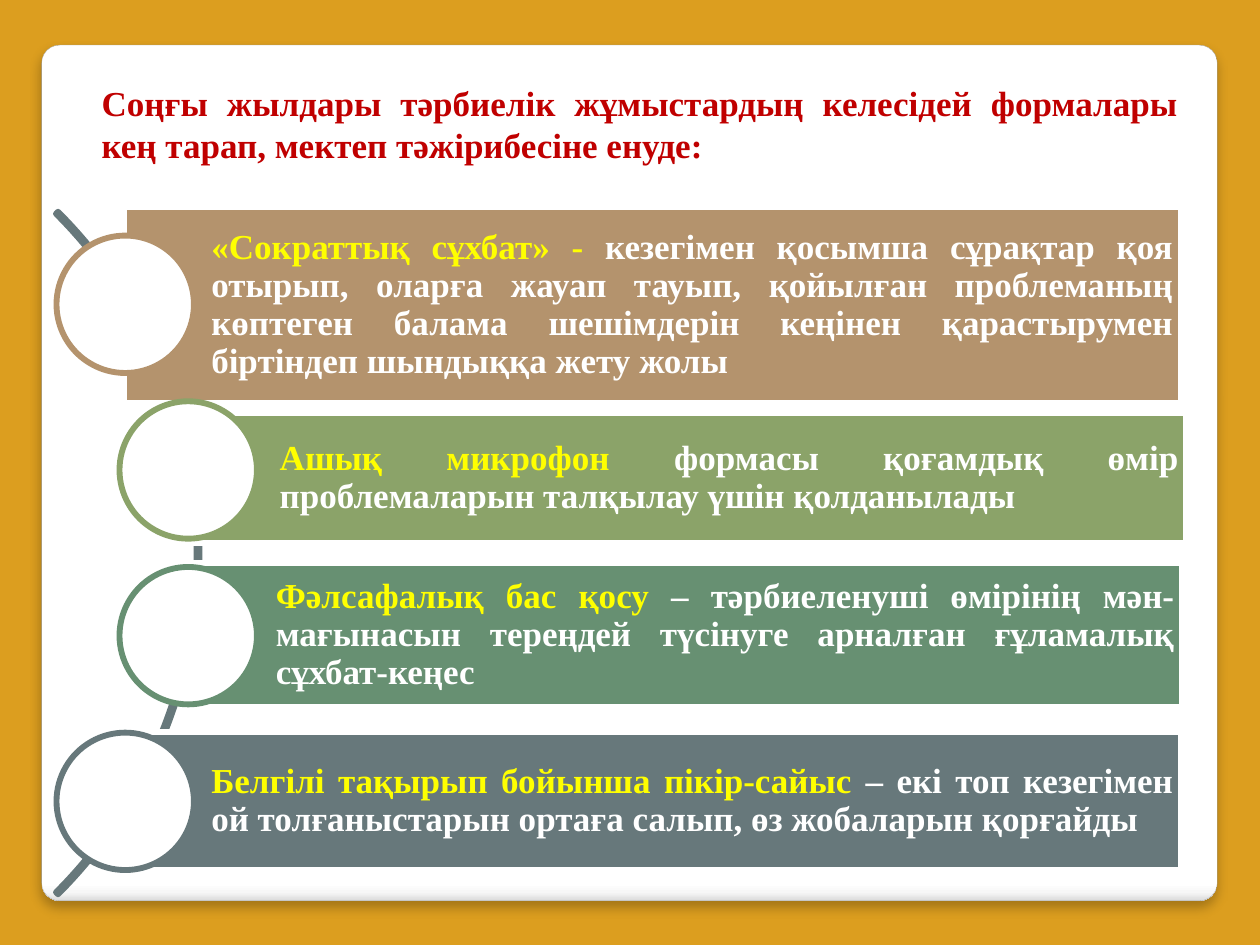
from dataclasses import dataclass

from lxml.etree import SubElement
from pptx import Presentation
from pptx.dml.color import RGBColor as Rgb
from pptx.enum.shapes import MSO_SHAPE as Kind
from pptx.enum.text import MSO_ANCHOR as Anchor, PP_ALIGN as Align
from pptx.oxml.ns import qn
from pptx.util import Cm, Pt


@dataclass(frozen=True)
class Theme:
    background: str = "DC9E1F"
    card_edge: str = "A4A4A4"
    white: str = "FFFFFF"
    title: str = "C00000"
    term: str = "FFFF00"
    arc: str = "67787B"
    font: str = "Times New Roman"
    text_size: float = 20
    outline: float = 3.35
    card_stops: tuple = ((0, "FFFFFF"), (98, "FFFFFF"), (99, "F7F7F7"), (100, "DADADA"))


@dataclass(frozen=True)
class Method:
    term: str
    meaning: str
    color: str
    bar: tuple[float, float, float, float]
    circle_left: float


THEME = Theme()
TITLE = ("Соңғы жылдары тəрбиелік жұмыстардың келесідей формалары кең тарап, "
         "мектеп тəжірибесіне енуде:")
CIRCLE_TOP, CIRCLE_STEP, CIRCLE_SIZE = 4.75, 3.34, 2.77
METHODS = (
    Method("«Сократтық сұхбат» - ",
           "кезегімен қосымша сұрақтар қоя отырып, оларға жауап тауып, қойылған проблеманың "
           "көптеген балама шешімдерін кеңінен қарастырумен біртіндеп шындыққа жету жолы",
           "B4936D", (2.51, 4.17, 21.29, 3.96), 1.14),
    Method("Ашық микрофон ",
           "формасы қоғамдық өмір проблемаларын талқылау үшін қолданылады",
           "8BA369", (3.89, 8.33, 20.02, 2.62), 2.41),
    Method("Фəлсафалық бас қосу ",
           "– тəрбиеленуші өмірінің мəн-мағынасын тереңдей түсінуге арналған ғұламалық сұхбат-кеңес",
           "679072", (3.81, 11.35, 20.02, 2.9), 2.41),
    Method("Белгілі тақырып бойынша пікір-сайыс ",
           "– екі топ кезегімен ой толғаныстарын ортаға салып, өз жобаларын қорғайды",
           "67787B", (2.51, 14.76, 21.29, 2.77), 1.14),
)


def add_outlined(slide, kind: Kind, box: tuple, fill: str | None, line: str,
                 width: float = THEME.outline):
    """Add a preset shape with a flat fill, or none, and an outline."""
    shape = slide.shapes.add_shape(kind, *map(Cm, box))
    shape.shadow.inherit = False
    if fill:
        shape.fill.solid()
        shape.fill.fore_color.rgb = Rgb.from_string(fill)
    else:
        shape.fill.background()
    shape.line.color.rgb = Rgb.from_string(line)
    shape.line.width = Pt(width)
    return shape


def style_run(run, color: str) -> None:
    """Give a run the slide's bold type in one colour."""
    run.font.name = THEME.font
    run.font.size = Pt(THEME.text_size)
    run.font.bold = True
    run.font.color.rgb = Rgb.from_string(color)


def add_card(slide) -> None:
    """Draw the rounded card with its shaded lower edge and soft shadow."""
    card = add_outlined(slide, Kind.ROUNDED_RECTANGLE, (0.84, 0.91, 23.7, 17.25),
                        None, THEME.card_edge, 0.16)
    card.adjustments[0] = 0.021
    card.fill.gradient()
    card.fill.gradient_angle = 270
    properties = card._element.spPr
    stops = properties.find(".//" + qn("a:gsLst"))
    stops.clear()
    for percent, color in THEME.card_stops:
        stop = SubElement(stops, qn("a:gs"), pos=str(percent * 1000))
        SubElement(stop, qn("a:srgbClr"), val=color)
    shadow = SubElement(properties.find(qn("a:effectLst")), qn("a:outerShdw"),
                        blurRad=str(Pt(6)), dist=str(Pt(4)), dir="5400000", rotWithShape="0")
    shade = SubElement(shadow, qn("a:srgbClr"), val="000000")
    SubElement(shade, qn("a:alpha"), val="25000")


def add_title(slide) -> None:
    """Write the justified heading."""
    frame = slide.shapes.add_textbox(Cm(1.8), Cm(1.52), Cm(22.2), Cm(1.96)).text_frame
    frame.word_wrap = True
    frame.text = TITLE
    heading = frame.paragraphs[0]
    heading.alignment = Align.JUSTIFY
    style_run(heading.runs[0], THEME.title)


def add_arc(slide) -> None:
    """Draw the thin arc that runs behind the circles."""
    arc = add_outlined(slide, Kind.BLOCK_ARC, (-15.44, 1.42, 19.46, 19.46), None, THEME.arc)
    for index, value in enumerate((189, 27, 0.003)):
        arc.adjustments[index] = value


def add_method(slide, method: Method, circle_top: float) -> None:
    """Draw one method's bar with its text and the circle before it."""
    bar = add_outlined(slide, Kind.RECTANGLE, method.bar, method.color, THEME.white)
    frame = bar.text_frame
    frame.word_wrap = True
    frame.vertical_anchor = Anchor.MIDDLE
    frame.margin_left = Cm(1.75)
    frame.margin_top = frame.margin_right = frame.margin_bottom = Cm(0.15)
    sentence = frame.paragraphs[0]
    sentence.alignment = Align.JUSTIFY
    sentence.line_spacing = 0.9
    for words, color in ((method.term, THEME.term), (method.meaning, THEME.white)):
        run = sentence.add_run()
        run.text = words
        style_run(run, color)
    add_outlined(slide, Kind.OVAL, (method.circle_left, circle_top, CIRCLE_SIZE, CIRCLE_SIZE),
                 THEME.white, method.color)


def main() -> None:
    """Build the slide and save it."""
    deck = Presentation()
    deck.slide_width, deck.slide_height = Cm(25.4), Cm(19.05)
    slide = deck.slides.add_slide(deck.slide_layouts[6])
    slide.background.fill.solid()
    slide.background.fill.fore_color.rgb = Rgb.from_string(THEME.background)
    add_card(slide)
    add_title(slide)
    add_arc(slide)
    for index, method in enumerate(METHODS):
        add_method(slide, method, CIRCLE_TOP + index * CIRCLE_STEP)
    deck.save("out.pptx")


if __name__ == "__main__":
    main()
